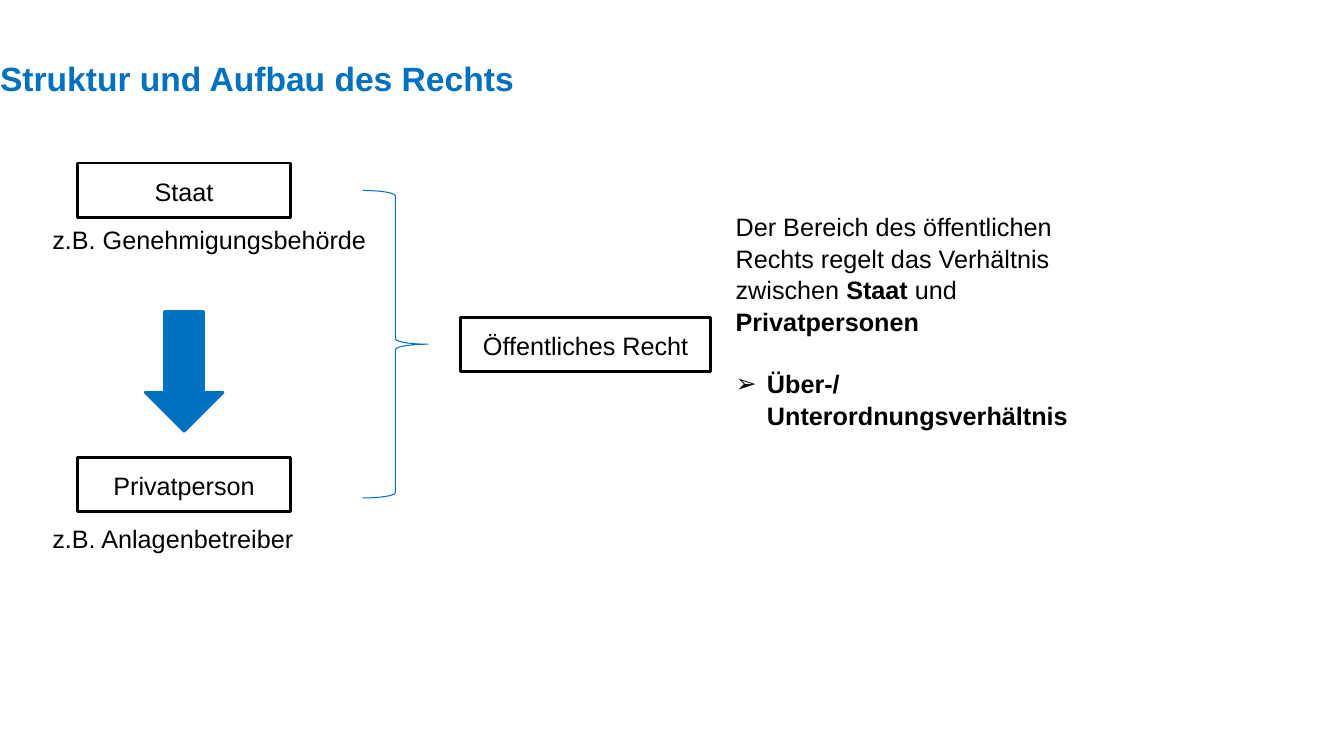
"""Build the slide on the structure of law: state, private person and public law."""
from dataclasses import dataclass

from lxml import etree
from pptx import Presentation
from pptx import util as u
from pptx.dml.color import RGBColor
from pptx.enum import lang, shapes, text
from pptx.oxml import ns

BLUE = RGBColor(0x00, 0x70, 0xC0)
BLACK = RGBColor(0x00, 0x00, 0x00)
WHITE = RGBColor(0xFF, 0xFF, 0xFF)

BODY_FONT = {"name": "Arial", "size": u.Pt(18), "language_id": lang.MSO_LANGUAGE_ID.GERMAN}
TITLE_FONT = {**BODY_FONT, "size": u.Pt(24), "bold": True}
LINE_SPACING = 1.05
BULLET_INDENT = u.Cm(0.79)

Run = tuple[str, bool]


@dataclass(frozen=True)
class Area:
    left: float
    top: float
    width: float
    height: float

    def lengths(self) -> tuple[u.Length, ...]:
        return tuple(u.Cm(n) for n in (self.left, self.top, self.width, self.height))


@dataclass(frozen=True)
class Figure:
    preset: shapes.MSO_SHAPE
    area: Area
    line: RGBColor
    weight: float
    fill: RGBColor | None = None
    label: str = ""


@dataclass(frozen=True)
class Note:
    area: Area
    paragraphs: tuple[tuple[Run, ...], ...]


ACTOR_LEFT, ACTOR_WIDTH, BOX_HEIGHT = 1.96, 5.36, 1.37
EXAMPLE_LEFT, EXAMPLE_WIDTH, EXAMPLE_HEIGHT = 1.07, 9.73, 1.02

FIGURES = (
    Figure(shapes.MSO_SHAPE.RECTANGLE, Area(ACTOR_LEFT, 4.11, ACTOR_WIDTH, BOX_HEIGHT),
           BLACK, 2, WHITE, "Staat"),
    Figure(shapes.MSO_SHAPE.DOWN_ARROW, Area(3.66, 7.85, 1.96, 3.02), BLUE, 2, BLUE),
    Figure(shapes.MSO_SHAPE.RECTANGLE, Area(ACTOR_LEFT, 11.53, ACTOR_WIDTH, BOX_HEIGHT),
           BLACK, 2, WHITE, "Privatperson"),
    Figure(shapes.MSO_SHAPE.RIGHT_BRACE, Area(9.14, 4.8, 1.65, 7.75), BLUE, 0.75),
    Figure(shapes.MSO_SHAPE.RECTANGLE, Area(11.61, 8, 6.3, BOX_HEIGHT),
           BLACK, 2, WHITE, "Öffentliches Recht"),
)

NOTES = (
    Note(Area(EXAMPLE_LEFT, 5.49, EXAMPLE_WIDTH, EXAMPLE_HEIGHT),
         ((("z.B. Genehmigungsbehörde", False),),)),
    Note(Area(EXAMPLE_LEFT, 13.03, EXAMPLE_WIDTH, EXAMPLE_HEIGHT),
         ((("z.B. Anlagenbetreiber", False),),)),
    Note(Area(18.29, 5.16, 9.47, 5.64),
         ((("Der Bereich des öffentlichen Rechts regelt das Verhältnis zwischen ", False),
           ("Staat", True), (" und ", False), ("Privatpersonen", True)),
          (("Über-/Unterordnungsverhältnis", True),))),
)


def apply(target, formats: dict) -> None:
    for name, setting in formats.items():
        setattr(target, name, setting)


def write_run(paragraph, wording: str, colour: RGBColor, formats: dict) -> None:
    run = paragraph.add_run()
    run.text = wording
    apply(run.font, formats)
    run.font.color.rgb = colour


def add_arrow_bullet(paragraph) -> None:
    properties = paragraph._p.get_or_add_pPr()
    properties.set("marL", str(BULLET_INDENT))
    properties.set("indent", str(-BULLET_INDENT))
    etree.SubElement(properties, ns.qn("a:buFont")).set("typeface", "Arial")
    etree.SubElement(properties, ns.qn("a:buChar")).set("char", "➢")


def draw_title(slide, wording: str, area: Area) -> None:
    title = slide.shapes.title
    apply(title, dict(zip(("left", "top", "width", "height"), area.lengths())))
    frame = title.text_frame
    apply(frame, {"margin_left": 0, "margin_top": 0, "margin_right": 0, "margin_bottom": 0,
                  "vertical_anchor": text.MSO_ANCHOR.TOP, "word_wrap": True,
                  "auto_size": text.MSO_AUTO_SIZE.NONE})
    heading = frame.paragraphs[0]
    apply(heading, {"alignment": text.PP_ALIGN.LEFT, "line_spacing": u.Pt(23.6)})
    write_run(heading, wording, BLUE, TITLE_FONT)


def draw_figure(slide, figure: Figure) -> None:
    drawn = slide.shapes.add_shape(figure.preset, *figure.area.lengths())
    drawn.shadow.inherit = False
    drawn.line.color.rgb = figure.line
    drawn.line.width = u.Pt(figure.weight)
    if figure.fill is None:
        drawn.fill.background()
    else:
        drawn.fill.solid()
        drawn.fill.fore_color.rgb = figure.fill
    if figure.label:
        drawn.text_frame.vertical_anchor = text.MSO_ANCHOR.MIDDLE
        caption = drawn.text_frame.paragraphs[0]
        apply(caption, {"alignment": text.PP_ALIGN.CENTER, "line_spacing": LINE_SPACING})
        write_run(caption, figure.label, BLACK, BODY_FONT)


def draw_note(slide, note: Note) -> None:
    frame = slide.shapes.add_textbox(*note.area.lengths()).text_frame
    apply(frame, {"word_wrap": True, "auto_size": text.MSO_AUTO_SIZE.SHAPE_TO_FIT_TEXT})
    for index, runs in enumerate(note.paragraphs):
        paragraph = frame.add_paragraph() if index else frame.paragraphs[0]
        if index:
            add_arrow_bullet(paragraph)
            paragraph.space_before = u.Pt(21.7)
        paragraph.line_spacing = LINE_SPACING
        for wording, bold in runs:
            write_run(paragraph, wording, BLACK, {**BODY_FONT, "bold": bold})


def main() -> None:
    deck = Presentation()
    apply(deck, {"slide_width": u.Cm(33.87), "slide_height": u.Cm(19.05)})
    slide = deck.slides.add_slide(deck.slide_layouts[5])
    draw_title(slide, "Struktur und Aufbau des Rechts", Area(0, 1.63, 24.89, 18.34))
    for figure in FIGURES:
        draw_figure(slide, figure)
    for note in NOTES:
        draw_note(slide, note)
    deck.save("out.pptx")


if __name__ == "__main__":
    main()
